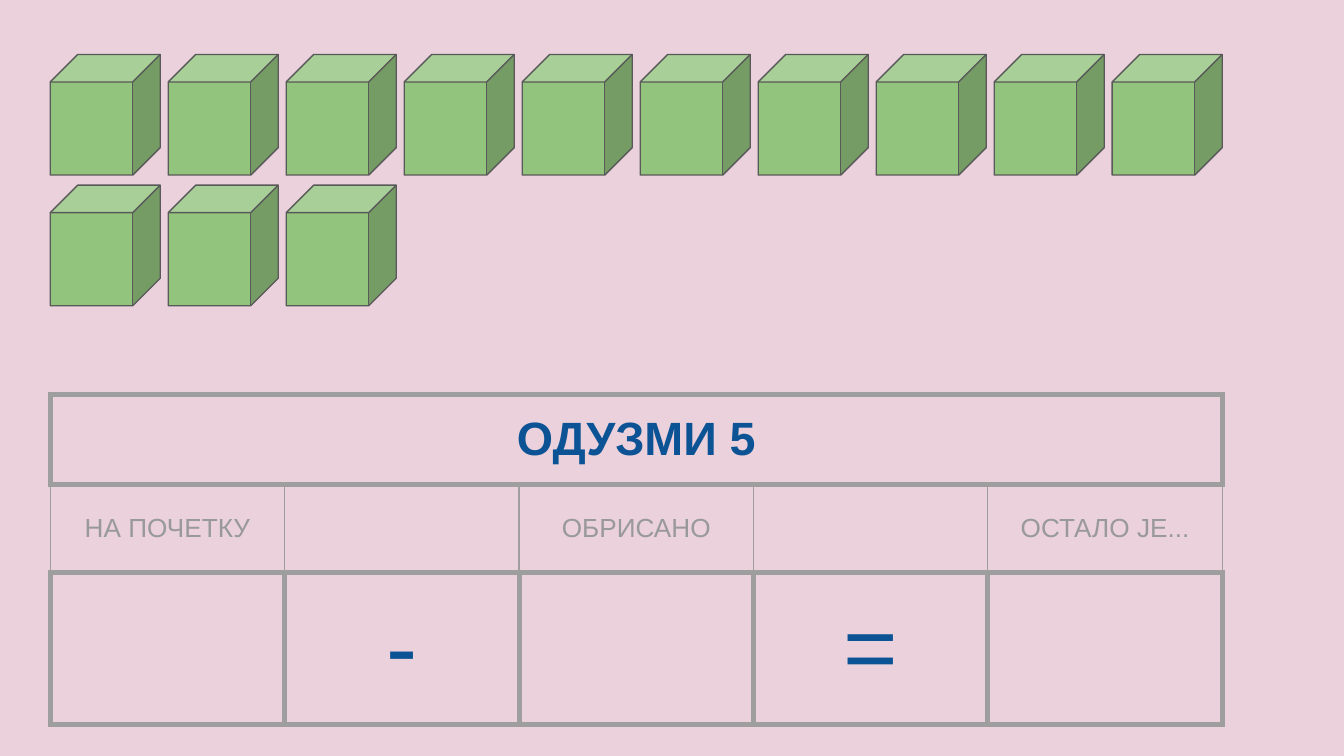
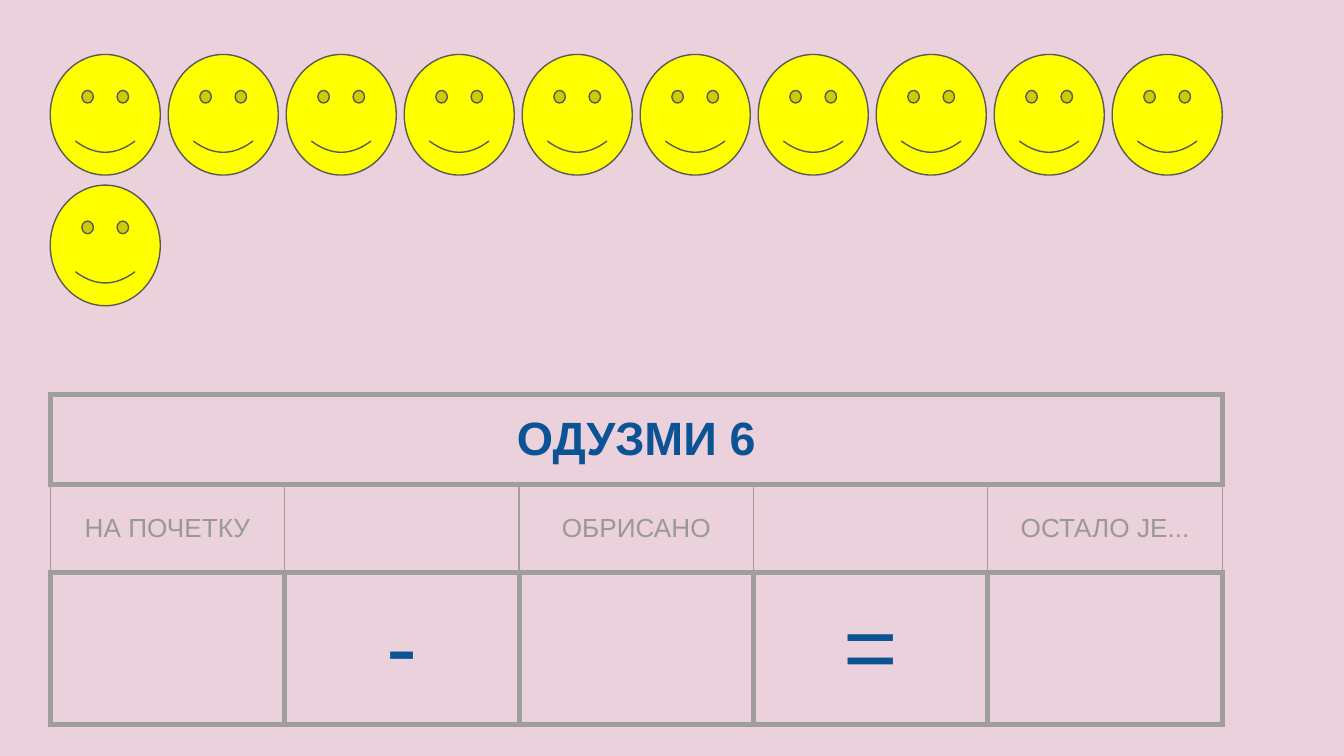
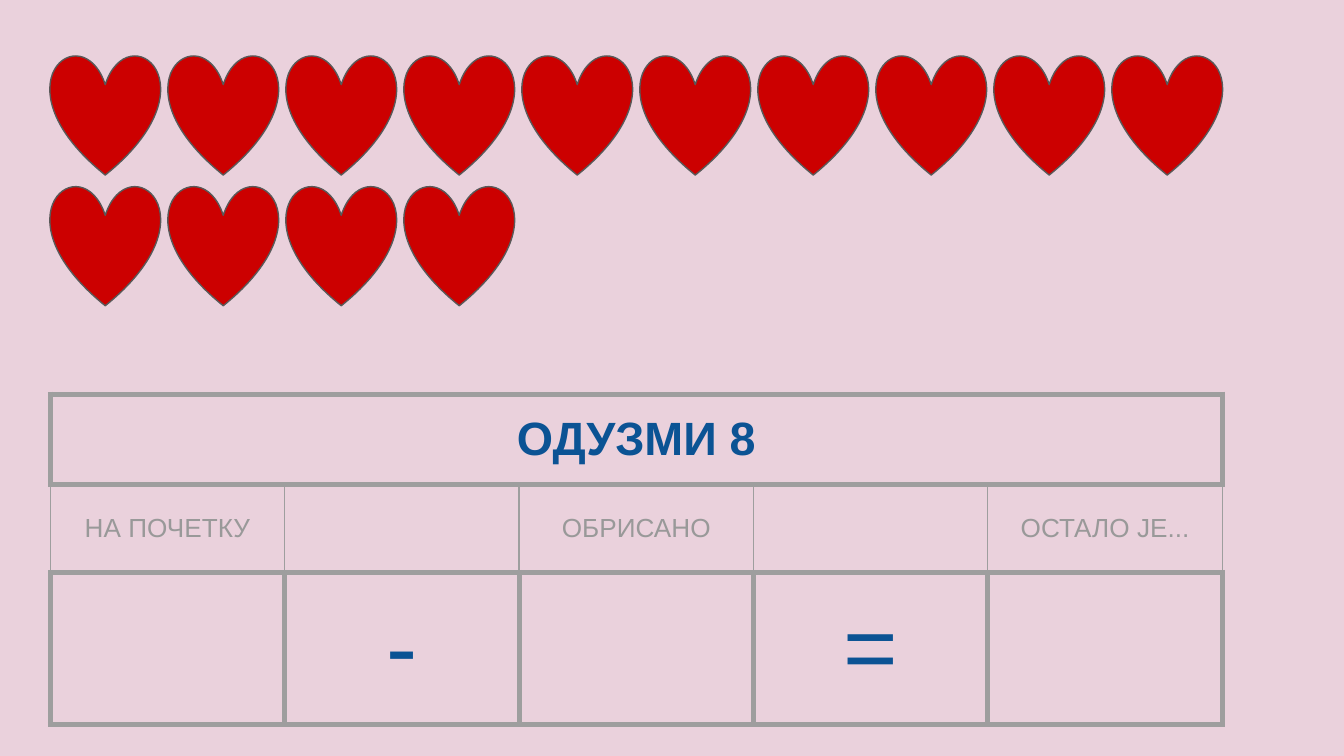
from lxml.etree import SubElement
from pptx import Presentation
from pptx.dml.color import RGBColor
from pptx.enum.shapes import MSO_SHAPE as Preset
from pptx.enum.text import MSO_ANCHOR as Anchor, PP_ALIGN as Align
from pptx.oxml.ns import qn
from pptx.util import Cm, Pt

# Content: one subtraction task per slide
TASKS = [
    {"title": "ОДУЗМИ 5", "preset": Preset.CUBE, "color": "green", "count": 13},
    {"title": "ОДУЗМИ 6", "preset": Preset.SMILEY_FACE, "color": "yellow", "count": 11},
    {"title": "ОДУЗМИ 8", "preset": Preset.HEART, "color": "red", "count": 14},
]
LABELS = ["НА ПОЧЕТКУ", "", "ОБРИСАНО", "", "ОСТАЛО ЈЕ..."]
EQUATION = ["", "-", "", "=", ""]

# Shared style
COLORS = {
    "background": "EAD1DC", "green": "93C47D", "yellow": "FFFF00", "red": "CC0000",
    "outline": "595959", "border": "9E9E9E", "label": "999999", "blue": "0B5394",
}
FONT = "Arial"
# Per table row: height in cm, text size, text colour, bold, side border in points
ROW_STYLES = [
    (1.71, 25, "blue", True, 3),
    (1.66, 14, "label", False, 0.75),
    (2.87, 50, "blue", False, 3),
]
THICK = 3

# Layout in cm
LEFT = 0.95
TABLE_TOP, COLUMN_WIDTH = 7.45, 4.43
TABLE_WIDTH = COLUMN_WIDTH * len(LABELS)
COUNTERS_TOP, COUNTER_WIDTH, COUNTER_HEIGHT = 1.03, 2.08, 2.28
PER_ROW = 10
STEP_X = (TABLE_WIDTH - COUNTER_WIDTH) / (PER_ROW - 1)
STEP_Y = 2.47


def rgb(name):
    return RGBColor.from_string(COLORS[name])


def set_borders(cell, side_width):
    properties = cell._tc.get_or_add_tcPr()
    widths = {"lnL": side_width, "lnR": side_width, "lnT": THICK, "lnB": THICK}
    for tag, width in widths.items():
        line = SubElement(properties, qn(f"a:{tag}"), w=str(Pt(width)))
        fill = SubElement(line, qn("a:solidFill"))
        SubElement(fill, qn("a:srgbClr"), val=COLORS["border"])


def style_cell(cell, text, size, color, bold, side_width):
    set_borders(cell, side_width)
    cell.fill.background()
    cell.vertical_anchor = Anchor.MIDDLE
    cell.margin_left = cell.margin_right = Cm(0.25)
    cell.margin_top = cell.margin_bottom = Cm(0.25)
    cell.text = text
    paragraph = cell.text_frame.paragraphs[0]
    paragraph.alignment = Align.CENTER
    font = paragraph.font
    font.name, font.size, font.bold = FONT, Pt(size), bold
    font.color.rgb = rgb(color)


def add_equation_table(slide, title):
    rows = [[title] + [""] * (len(LABELS) - 1), LABELS, EQUATION]
    height = sum(style[0] for style in ROW_STYLES)
    table = slide.shapes.add_table(
        len(rows), len(LABELS), Cm(LEFT), Cm(TABLE_TOP), Cm(TABLE_WIDTH), Cm(height)
    ).table
    table.first_row = table.horz_banding = False
    for column in table.columns:
        column.width = Cm(COLUMN_WIDTH)
    for i, (texts, (row_height, *style)) in enumerate(zip(rows, ROW_STYLES)):
        table.rows[i].height = Cm(row_height)
        for j, text in enumerate(texts):
            style_cell(table.cell(i, j), text, *style)
    table.cell(0, 0).merge(table.cell(0, len(LABELS) - 1))


def add_counters(slide, preset, color, count):
    for i in range(count):
        row, column = divmod(i, PER_ROW)
        shape = slide.shapes.add_shape(
            preset, Cm(LEFT + column * STEP_X), Cm(COUNTERS_TOP + row * STEP_Y),
            Cm(COUNTER_WIDTH), Cm(COUNTER_HEIGHT)
        )
        shape.shadow.inherit = False
        shape.fill.solid()
        shape.fill.fore_color.rgb = rgb(color)
        shape.line.color.rgb = rgb("outline")
        shape.line.width = Pt(0.75)


def main():
    presentation = Presentation()
    presentation.slide_width, presentation.slide_height = Cm(25.4), Cm(14.29)
    for task in TASKS:
        slide = presentation.slides.add_slide(presentation.slide_layouts[6])
        slide.background.fill.solid()
        slide.background.fill.fore_color.rgb = rgb("background")
        add_equation_table(slide, task["title"])
        add_counters(slide, task["preset"], task["color"], task["count"])
    presentation.save("out.pptx")


if __name__ == "__main__":
    main()
